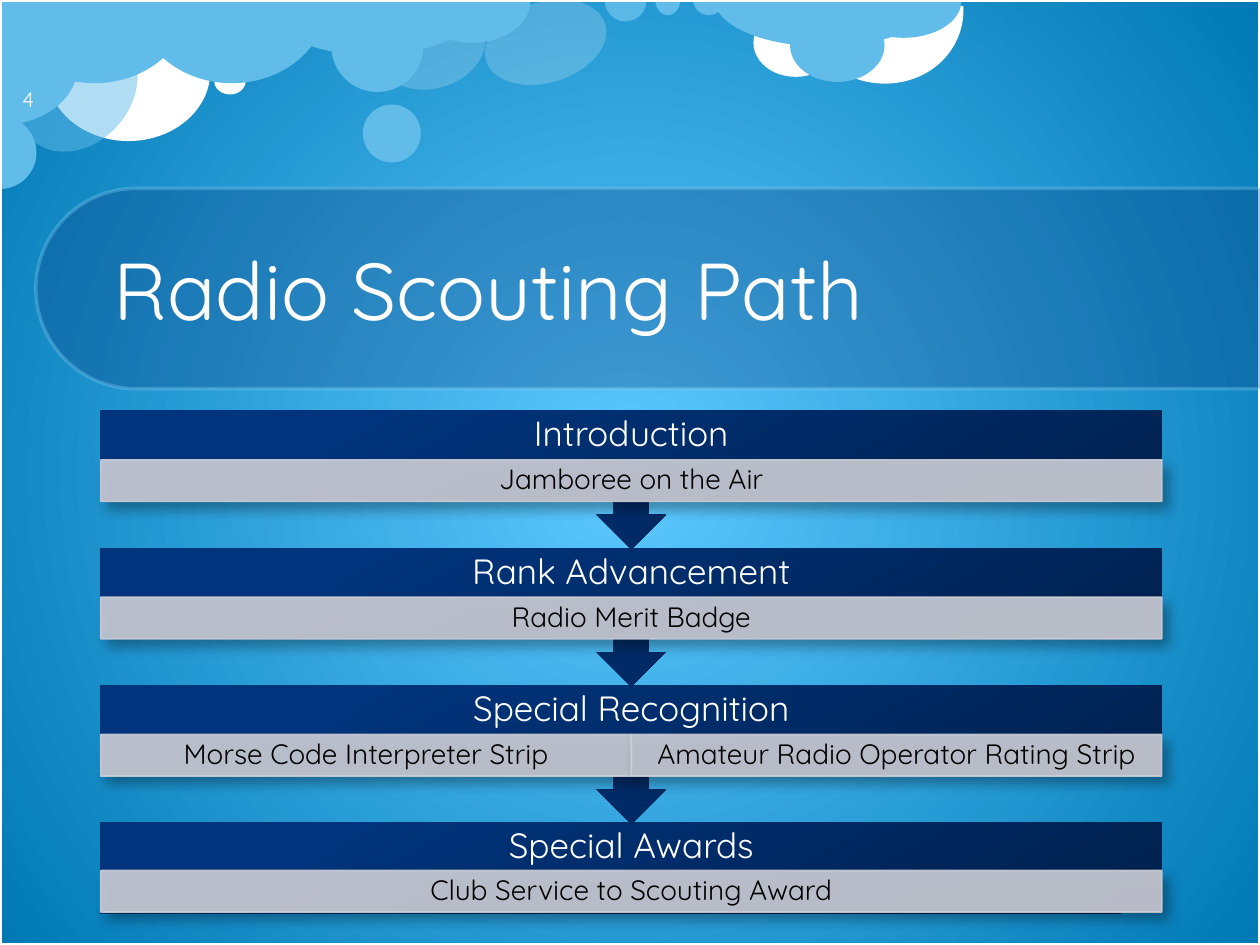
"""Builds the Radio Scouting Path slide with its sky backdrop and step flow."""
from dataclasses import dataclass

from pptx import Presentation
from pptx.dml.color import RGBColor
from pptx.enum.shapes import MSO_SHAPE
from pptx.enum.text import MSO_ANCHOR, PP_ALIGN
from pptx.oxml import parse_xml
from pptx.oxml.ns import nsdecls, qn
from pptx.util import Inches, Pt

ELLIPSE = MSO_SHAPE.OVAL
PIE = MSO_SHAPE.PIE
ARC = MSO_SHAPE.ARC
RECTANGLE = MSO_SHAPE.RECTANGLE
ROUND_TOP = MSO_SHAPE.ROUND_2_SAME_RECTANGLE
CALLOUT = MSO_SHAPE.UP_ARROW_CALLOUT
MIDDLE = MSO_ANCHOR.MIDDLE
LEFT, CENTER = PP_ALIGN.LEFT, PP_ALIGN.CENTER


@dataclass(frozen=True)
class Theme:
    font: str = "Quicksand"
    white: str = "FFFFFF"
    black: str = "000000"
    cloud: str = "62BCE9"
    pale: str = "8FD9FB"
    banner: str = "073779"
    detail: str = "CCCED7"
    sky: tuple = ((0, "5DC9FF"), (100, "0079B5"))
    navy: tuple = ((0, "00204C"), (80, "00347C"), (100, "00347D"))
    title_size: int = 46
    header_size: int = 20
    detail_size: int = 16
    number_size: int = 12


THEME = Theme()


@dataclass(frozen=True)
class Cloud:
    kind: int
    box: tuple
    color: str = THEME.cloud
    opacity: int = 100
    rotation: float = 0
    angles: tuple = ()


@dataclass(frozen=True)
class Step:
    header: str
    details: tuple


HALF = (0, 108)
CLOUDS = (
    Cloud(ELLIPSE, (3.11, -0.05, 0.64, 0.86), THEME.white, 20, 72.8),
    Cloud(ELLIPSE, (0.37, 0.01, 1.3, 1.11), THEME.white),
    Cloud(ARC, (6.39, -0.6, 1.21, 1.31), THEME.white, 100, 106.5, (151.8, 44.48)),
    Cloud(ELLIPSE, (5.98, 0.07, 0.67, 0.54), THEME.white),
    Cloud(PIE, (-0.01, -0.66, 1.52, 1.32), angles=HALF),
    Cloud(PIE, (2.08, -0.44, 1.75, 0.88), angles=HALF),
    Cloud(ELLIPSE, (2.88, 0.83, 0.46, 0.46)),
    Cloud(ELLIPSE, (0.19, 0.18, 0.85, 1.07), opacity=50, rotation=41.8),
    Cloud(PIE, (-0.29, 0.92, 0.58, 0.58), rotation=270, angles=HALF),
    Cloud(ELLIPSE, (1.7, 0.54, 0.25, 0.21), THEME.white),
    Cloud(PIE, (1.08, -0.66, 1.52, 1.32), angles=HALF),
    Cloud(PIE, (5.67, -0.38, 1.75, 0.75), angles=HALF),
    Cloud(ELLIPSE, (6.27, 0.07, 0.75, 0.58)),
    Cloud(PIE, (6.71, -0.28, 0.92, 0.58), angles=HALF),
    Cloud(ELLIPSE, (4.01, -0.16, 0.64, 0.99), THEME.white, 20, 72.8),
    Cloud(PIE, (4.8, -0.16, 0.33, 0.33), THEME.pale, 50, angles=HALF),
    Cloud(PIE, (5.2, -0.13, 0.2, 0.25), angles=HALF),
    Cloud(PIE, (5.5, -0.13, 0.25, 0.25), angles=HALF),
    Cloud(ELLIPSE, (2.63, 0, 0.73, 0.73)),
    Cloud(PIE, (3.29, -0.33, 0.92, 0.67), angles=HALF),
    Cloud(PIE, (-0.47, -0.09, 0.93, 1.24), rotation=270, angles=HALF),
)
STEPS = (
    Step("Introduction", ("Jamboree on the Air",)),
    Step("Rank Advancement", ("Radio Merit Badge",)),
    Step("Special Recognition",
         ("Morse Code Interpreter Strip", "Amateur Radio Operator Rating Strip")),
    Step("Special Awards", ("Club Service to Scouting Award",)),
)
FLOW_LEFT, FLOW_TOP, FLOW_WIDTH, PITCH = 0.8, 3.26, 8.42, 1.09
HEADER_HEIGHT, DETAIL_HEIGHT = 0.39, 0.33


def paint(fill, color: str, opacity: int = 100) -> None:
    fill.solid()
    fill.fore_color.rgb = RGBColor.from_string(color)
    if opacity < 100:
        node = fill._xPr.find(".//" + qn("a:srgbClr"))
        node.append(parse_xml(f'<a:alpha {nsdecls("a")} val="{opacity * 1000}"/>'))


def make_gradient(owner, stops: tuple, direction: str) -> None:
    marks = "".join(f'<a:gs pos="{place * 1000}"><a:srgbClr val="{color}"/></a:gs>'
                    for place, color in stops)
    solid = owner.find(".//" + qn("a:solidFill"))
    solid.getparent().replace(solid, parse_xml(
        f'<a:gradFill {nsdecls("a")} rotWithShape="0"><a:gsLst>{marks}</a:gsLst>'
        f'{direction}</a:gradFill>'))


def add_block(page, kind: int, box: tuple, color: str = "", opacity: int = 100,
              rotation: float = 0, adjustments: tuple = (), line: tuple = ()):
    shape = page.shapes.add_shape(kind, *map(Inches, box))
    shape.shadow.inherit = False
    shape.rotation = rotation
    for index, value in enumerate(adjustments):
        shape.adjustments[index] = value
    if color:
        paint(shape.fill, color, opacity)
    else:
        shape.fill.background()
    if line:
        line_color, width, line_opacity = line
        paint(shape.line.fill, line_color, line_opacity)
        shape.line.width = Pt(width)
    else:
        shape.line.fill.background()
    return shape


def write(shape, text: str, *, size: int, color: str, align=CENTER,
          spacing=0.9, insets: tuple = (0.1, 0.05)) -> None:
    frame = shape.text_frame
    frame.word_wrap = True
    frame.vertical_anchor = MIDDLE
    frame.margin_left = frame.margin_right = Inches(insets[0])
    frame.margin_top = frame.margin_bottom = Inches(insets[1])
    para = frame.paragraphs[0]
    para.alignment = align
    para.line_spacing = spacing
    span = para.add_run()
    span.text = text
    span.font.name = THEME.font
    span.font.size = Pt(size)
    span.font.color.rgb = RGBColor.from_string(color)


def add_text(page, box: tuple, text: str, **style) -> None:
    write(page.shapes.add_textbox(*map(Inches, box)), text, **style)


def add_detail(page, box: tuple, text: str) -> None:
    shape = add_block(page, RECTANGLE, box, THEME.detail, 90, line=(THEME.detail, 1, 90))
    shape._element.spPr.find(qn("a:effectLst")).append(parse_xml(
        f'<a:outerShdw {nsdecls("a")} blurRad="{Pt(7)}" dist="{Pt(5)}" dir="{50 * 60000}" '
        f'rotWithShape="0"><a:srgbClr val="{THEME.black}"><a:alpha val="35000"/>'
        f'</a:srgbClr></a:outerShdw>'))
    write(shape, text, size=THEME.detail_size, color=THEME.black, insets=(0.12, 0.02))


def add_step(page, step: Step, top: float, last: bool) -> None:
    kind, height, rotation = (RECTANGLE, 0.72, 0) if last else (CALLOUT, 1.1, 180)
    block = add_block(page, kind, (FLOW_LEFT, top, FLOW_WIDTH, height), THEME.navy[0][1],
                      rotation=rotation)
    make_gradient(block._element.spPr, THEME.navy,
                  f'<a:lin ang="{240 * 60000}" scaled="0"/>')
    add_text(page, (FLOW_LEFT, top, FLOW_WIDTH, HEADER_HEIGHT), step.header,
             size=THEME.header_size, color=THEME.white, insets=(0.16, 0.16))
    width = FLOW_WIDTH / len(step.details)
    detail_top = top + (0.38 if last else HEADER_HEIGHT)
    for index, detail in enumerate(step.details):
        add_detail(page, (FLOW_LEFT + index * width, detail_top, width, DETAIL_HEIGHT), detail)


def main() -> None:
    deck = Presentation()
    deck.slide_width, deck.slide_height = Inches(10), Inches(7.5)
    page = deck.slides.add_slide(deck.slide_layouts[6])
    paint(page.background.fill, THEME.sky[0][1])
    make_gradient(page._element, THEME.sky,
                  '<a:path path="circle"><a:fillToRect l="50000" t="50000" '
                  'r="50000" b="50000"/></a:path>')
    for cloud in CLOUDS:
        add_block(page, cloud.kind, cloud.box, cloud.color, cloud.opacity,
                  cloud.rotation, cloud.angles)
    add_block(page, RECTANGLE, (0, 0, 10, 7.5), line=(THEME.white, 2, 100))
    add_block(page, ROUND_TOP, (4.35, -2.57, 1.59, 9.72), THEME.banner, 30, 270,
              (0.5, 0), (THEME.pale, 2, 30))
    add_text(page, (0.8, 1.56, 8.44, 1.45), "Radio Scouting Path", size=THEME.title_size,
             color=THEME.white, align=LEFT, spacing=Pt(56))
    add_text(page, (0.08, 0.66, 1.52, 0.25), "4", size=THEME.number_size,
             color=THEME.white, align=LEFT, spacing=1.0)
    for index, step in reversed(tuple(enumerate(STEPS))):
        add_step(page, step, FLOW_TOP + index * PITCH, index == len(STEPS) - 1)
    deck.save("out.pptx")


if __name__ == "__main__":
    main()
